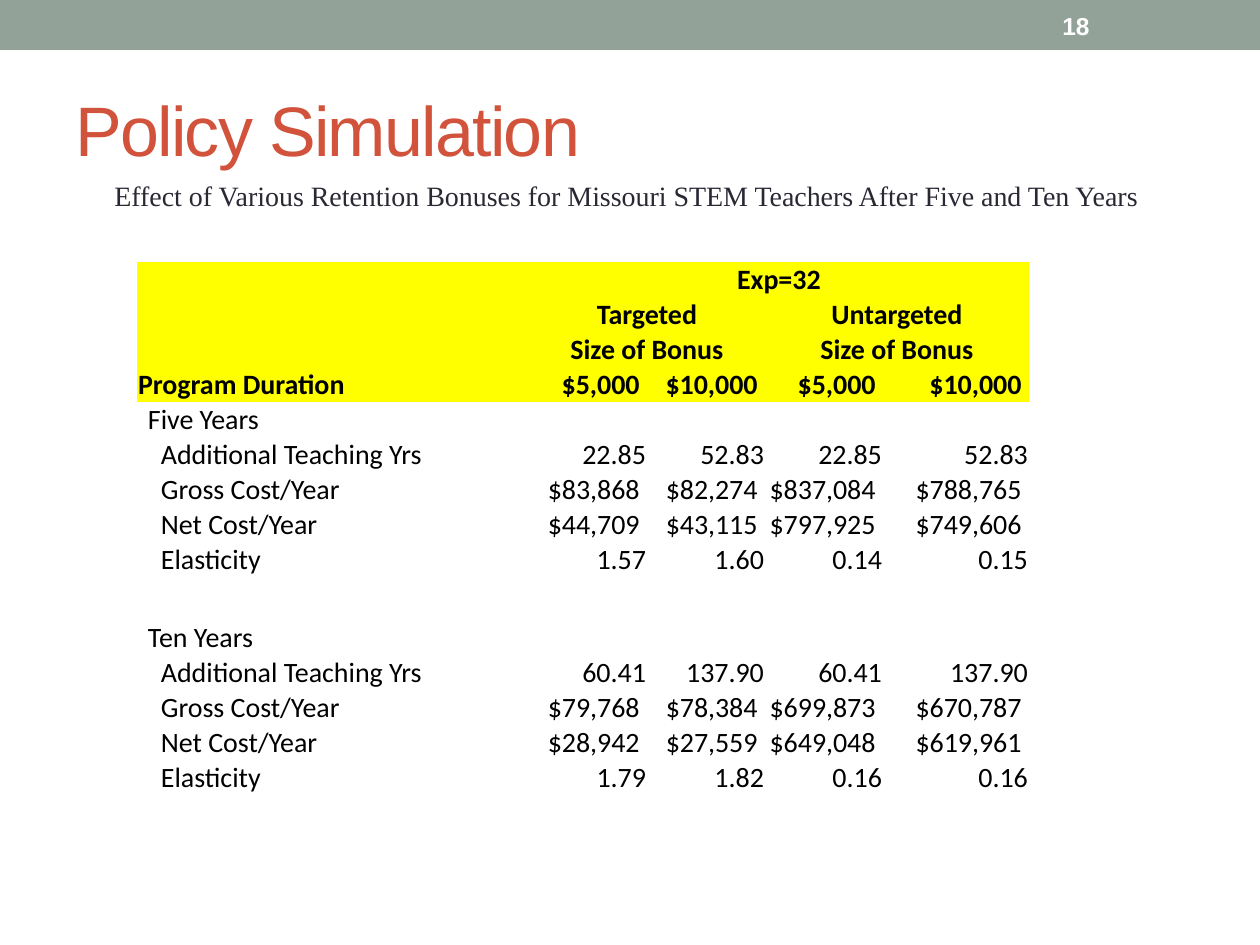
from lxml.etree import SubElement
from pptx import Presentation
from pptx.dml.color import RGBColor
from pptx.enum.shapes import MSO_SHAPE as Shape
from pptx.enum.text import MSO_ANCHOR as Anchor, PP_ALIGN as Align
from pptx.oxml.ns import qn
from pptx.util import Emu, Pt

EMU_PER_PX = 914400 // 126
NO_STYLE_NO_GRID = "{2D5ABB26-0587-4C30-8999-92F81FD0307C}"

COLUMN_WIDTHS = [360, 32, 118, 118, 118, 146]
ROW_HEIGHT, GAP_ROW_HEIGHT = 35, 43
HEADER_ROWS = [
    ["", "", "Exp=32", "", "", ""],
    ["", "", "Targeted", "", "Untargeted", ""],
    ["", "", "Size of Bonus", "", "Size of Bonus", ""],
    ["Program Duration", "", "$5,000", "$10,000", "$5,000", "$10,000"],
]
HEADER_SPANS = {(0, 2): 4, (1, 2): 2, (1, 4): 2, (2, 2): 2, (2, 4): 2}
MEASURES = ["Additional Teaching Yrs", "Gross Cost/Year", "Net Cost/Year", "Elasticity"]
RESULTS = {
    "Five Years": [
        ["22.85", "52.83", "22.85", "52.83"],
        ["$83,868", "$82,274", "$837,084", "$788,765"],
        ["$44,709", "$43,115", "$797,925", "$749,606"],
        ["1.57", "1.60", "0.14", "0.15"],
    ],
    "Ten Years": [
        ["60.41", "137.90", "60.41", "137.90"],
        ["$79,768", "$78,384", "$699,873", "$670,787"],
        ["$28,942", "$27,559", "$649,048", "$619,961"],
        ["1.79", "1.82", "0.16", "0.16"],
    ],
}


def px(length):
    return Emu(length * EMU_PER_PX)


def color(hex_code):
    return RGBColor.from_string(hex_code)


def write(frame, text, size=16, font="Calibri", fill="000000", bold=False,
          align=Align.LEFT, indent=0, spacing=0):
    """Fill the first paragraph; indent is in px, letter spacing in points."""
    paragraph = frame.paragraphs[0]
    paragraph.alignment = align
    if indent:
        paragraph._p.get_or_add_pPr().set("indent", str(px(indent)))
    run = paragraph.add_run()
    run.text = text
    run.font.size, run.font.name, run.font.bold = Pt(size), font, bold
    run.font.color.rgb = color(fill)
    if spacing:
        run._r.get_or_add_rPr().set("spc", str(spacing * 100))


def table_rows():
    """Return (is_header, label margin, texts) for every table row."""
    rows = [(True, 1, texts) for texts in HEADER_ROWS]
    for duration, values in RESULTS.items():
        if duration != "Five Years":
            rows.append((False, 1, [""] * 6))
        rows.append((False, 11, [duration] + [""] * 5))
        rows += [(False, 24, [measure, "", *numbers])
                 for measure, numbers in zip(MEASURES, values)]
    return rows


class SlideBuilder:
    gray, red, dark, white, yellow = "93A299", "D2533C", "292934", "FFFFFF", "FFFF00"

    def __init__(self, slide):
        self.slide = slide

    def bar(self, left, top, width, height):
        shape = self.slide.shapes.add_shape(
            Shape.RECTANGLE, px(left), px(top), px(width), px(height))
        shape.shadow.inherit = False
        shape.fill.solid()
        shape.fill.fore_color.rgb = color(self.gray)
        shape.line.fill.background()

    def text(self, box, text, anchor=Anchor.TOP, margin_top=6, **style):
        frame = self.slide.shapes.add_textbox(*map(px, box)).text_frame
        frame.word_wrap = True
        frame.vertical_anchor = anchor
        frame.margin_top = px(margin_top)
        write(frame, text, **style)

    def cell(self, cell, text, header, margin_left, align):
        cell.margin_left, cell.margin_right = px(margin_left), px(1)
        cell.margin_top, cell.margin_bottom = px(1), px(0)
        cell.vertical_anchor = Anchor.BOTTOM
        if header:
            cell.fill.solid()
            cell.fill.fore_color.rgb = color(self.yellow)
        else:
            cell.fill.background()
        if text:
            shown = text + " " if text.startswith("$") else text
            write(cell.text_frame, shown, bold=header, align=align)
        else:
            SubElement(cell.text_frame.paragraphs[0]._p, qn("a:endParaRPr"), sz="1200")

    def table(self, left, top, rows):
        heights = [ROW_HEIGHT if any(texts) or header else GAP_ROW_HEIGHT
                   for header, _, texts in rows]
        table = self.slide.shapes.add_table(
            len(rows), len(COLUMN_WIDTHS), px(left), px(top),
            px(sum(COLUMN_WIDTHS)), px(sum(heights))).table
        table.first_row = table.horz_banding = False
        table._tbl.tblPr.find(qn("a:tableStyleId")).text = NO_STYLE_NO_GRID
        for column, width in zip(table.columns, COLUMN_WIDTHS):
            column.width = px(width)
        for r, (header, label_margin, texts) in enumerate(rows):
            table.rows[r].height = px(heights[r])
            for c, text in enumerate(texts):
                align = (Align.CENTER if (r, c) in HEADER_SPANS
                         else Align.RIGHT if c else Align.LEFT)
                self.cell(table.cell(r, c), text, header, 1 if c else label_margin, align)
        for (r, c), span in HEADER_SPANS.items():
            table.cell(r, c).merge(table.cell(r, c + span - 1))


def main():
    presentation = Presentation()
    presentation.slide_width, presentation.slide_height = px(1260), px(945)
    builder = SlideBuilder(presentation.slides.add_slide(presentation.slide_layouts[6]))
    builder.bar(0, 0, 1260, 50)
    builder.text((1050, 3, 147, 45), "18", anchor=Anchor.MIDDLE,
                 size=14, font="Arial", fill=builder.white, bold=True)
    builder.text((84, 170, 1113, 81),
                 "Effect of Various Retention Bonuses for Missouri STEM Teachers "
                 "After Five and Ten Years",
                 margin_top=9, font="Times New Roman", fill=builder.dark, indent=18)
    builder.text((63, 73, 1134, 136), "Policy Simulation", margin_top=14,
                 size=40, font="Arial", fill=builder.red, spacing=-1)
    builder.table(137, 262, table_rows())
    presentation.save("out.pptx")


if __name__ == "__main__":
    main()
